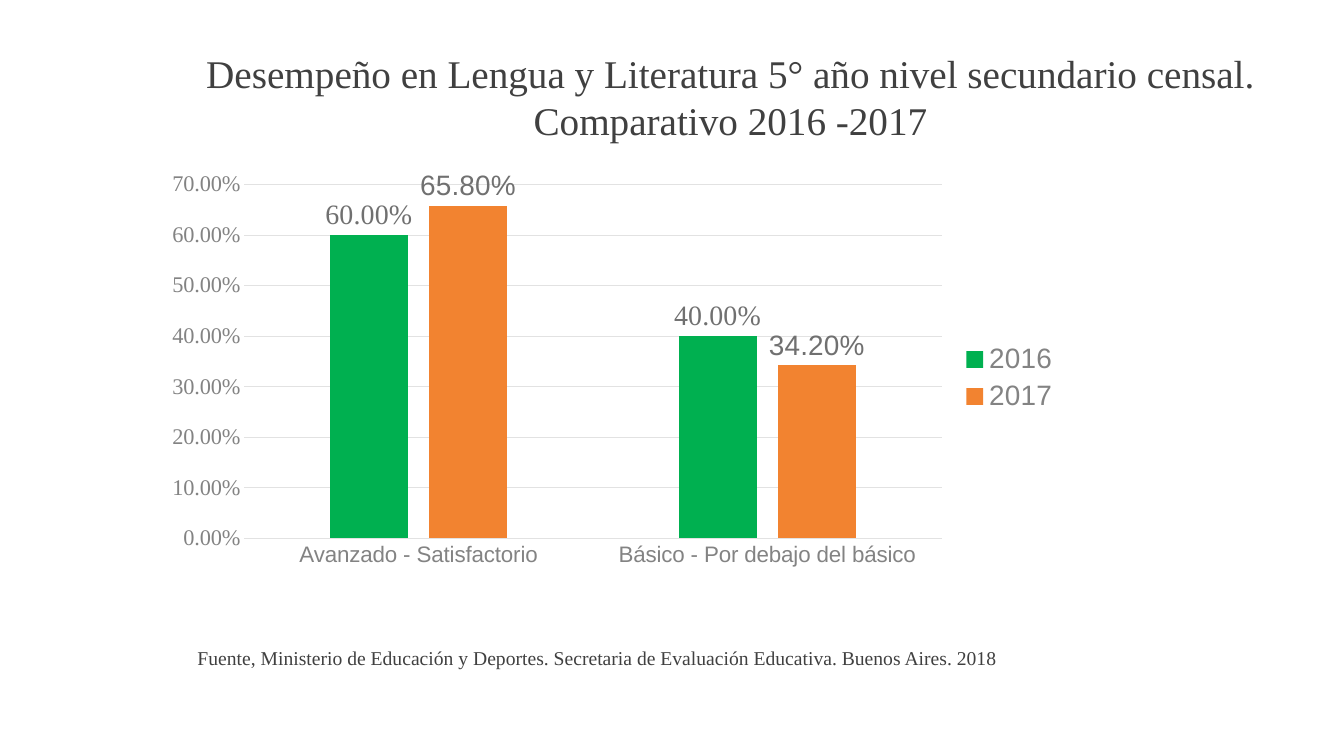
"""Build a slide comparing 2016 and 2017 language and literature results."""
import pptx
import pptx.chart.data
import pptx.dml.color
import pptx.enum.chart
import pptx.enum.text
import pptx.oxml
import pptx.oxml.ns
import pptx.util

Inches = pptx.util.Inches
Pt = pptx.util.Pt

COLORS = {
    "text": "404040",
    "axis": "838383",
    "label": "707070",
    "grid": "E2E2E2",
    "2016": "00B050",
    "2017": "F28330",
}
SANS, SERIF = "Arial", "Times New Roman"
PERCENT = "0.00%"
RESULTS = [("2016", (0.6, 0.4), SERIF), ("2017", (0.658, 0.342), SANS)]
PLOT_AREA = {"x": 0.078, "y": 0.131, "w": 0.779, "h": 0.675}
TEXTS = [
    ("Desempeño en Lengua y Literatura 5° año nivel secundario censal. Comparativo 2016 -2017",
     (1.23, 0.44, 12.03, 1.04), 28, pptx.enum.text.PP_ALIGN.CENTER),
    ("Fuente, Ministerio de Educación y Deportes. Secretaria de Evaluación Educativa. Buenos Aires. 2018",
     (1.86, 6.36, 8.43, 0.34), 14, pptx.enum.text.PP_ALIGN.LEFT),
]


def rgb(name):
    return pptx.dml.color.RGBColor.from_string(COLORS[name])


def style_font(font, name, size, color):
    font.name = name
    font.size = Pt(size)
    font.bold = False
    font.color.rgb = rgb(color)


presentation = pptx.Presentation()
presentation.slide_width = Inches(13.33)
presentation.slide_height = Inches(7.5)
slide = presentation.slides.add_slide(presentation.slide_layouts[6])

chart_data = pptx.chart.data.CategoryChartData(number_format=PERCENT)
chart_data.categories = ["Avanzado - Satisfactorio", "Básico - Por debajo del básico"]
for year, values, label_font in RESULTS:
    chart_data.add_series(year, values)
chart = slide.shapes.add_chart(
    pptx.enum.chart.XL_CHART_TYPE.COLUMN_CLUSTERED,
    Inches(1.71), Inches(1.15), Inches(8.9), Inches(5.2), chart_data,
).chart
chart.has_title = False
style_font(chart.font, SANS, 10, "text")

chart.has_legend = True
chart.legend.position = pptx.enum.chart.XL_LEGEND_POSITION.RIGHT
chart.legend.include_in_layout = False
style_font(chart.legend.font, SANS, 20, "axis")

category_axis, value_axis = chart.category_axis, chart.value_axis
for axis, axis_font in ((category_axis, SANS), (value_axis, SERIF)):
    axis.major_tick_mark = pptx.enum.chart.XL_TICK_MARK.NONE
    axis.minor_tick_mark = pptx.enum.chart.XL_TICK_MARK.NONE
    style_font(axis.tick_labels.font, axis_font, 16, "axis")
value_axis.minimum_scale = 0
value_axis.maximum_scale = 0.7
value_axis.major_unit = 0.1
value_axis.tick_labels.number_format = PERCENT
value_axis.tick_labels.number_format_is_linked = False
value_axis.format.line.fill.background()
value_axis.has_major_gridlines = True
for line in (category_axis.format.line, value_axis.major_gridlines.format.line):
    line.color.rgb = rgb("grid")
    line.width = Pt(0.75)

plot = chart.plots[0]
plot.vary_by_categories = False
plot.gap_width = 219
plot.overlap = -27
for series, (year, values, label_font) in zip(plot.series, RESULTS):
    series.format.fill.solid()
    series.format.fill.fore_color.rgb = rgb(year)
    series.format.line.fill.background()
    labels = series.data_labels
    labels.show_value = True
    labels.position = pptx.enum.chart.XL_LABEL_POSITION.OUTSIDE_END
    labels.number_format = PERCENT
    labels.number_format_is_linked = False
    style_font(labels.font, label_font, 20, "label")

plot_area = chart.element.xpath("c:chart/c:plotArea")[0]
for layout in plot_area.xpath("c:layout"):
    plot_area.remove(layout)
settings = '<c:layoutTarget val="inner"/><c:xMode val="edge"/><c:yMode val="edge"/>'
settings += "".join(f'<c:{key} val="{value}"/>' for key, value in PLOT_AREA.items())
plot_area.insert(0, pptx.oxml.parse_xml(
    f'<c:layout {pptx.oxml.ns.nsdecls("c")}><c:manualLayout>{settings}</c:manualLayout></c:layout>'
))

for text, box, size, alignment in TEXTS:
    text_frame = slide.shapes.add_textbox(*map(Inches, box)).text_frame
    text_frame.word_wrap = True
    text_frame.auto_size = pptx.enum.text.MSO_AUTO_SIZE.SHAPE_TO_FIT_TEXT
    paragraph = text_frame.paragraphs[0]
    paragraph.alignment = alignment
    run = paragraph.add_run()
    run.text = text
    style_font(run.font, SERIF, size, "text")

presentation.save("out.pptx")
